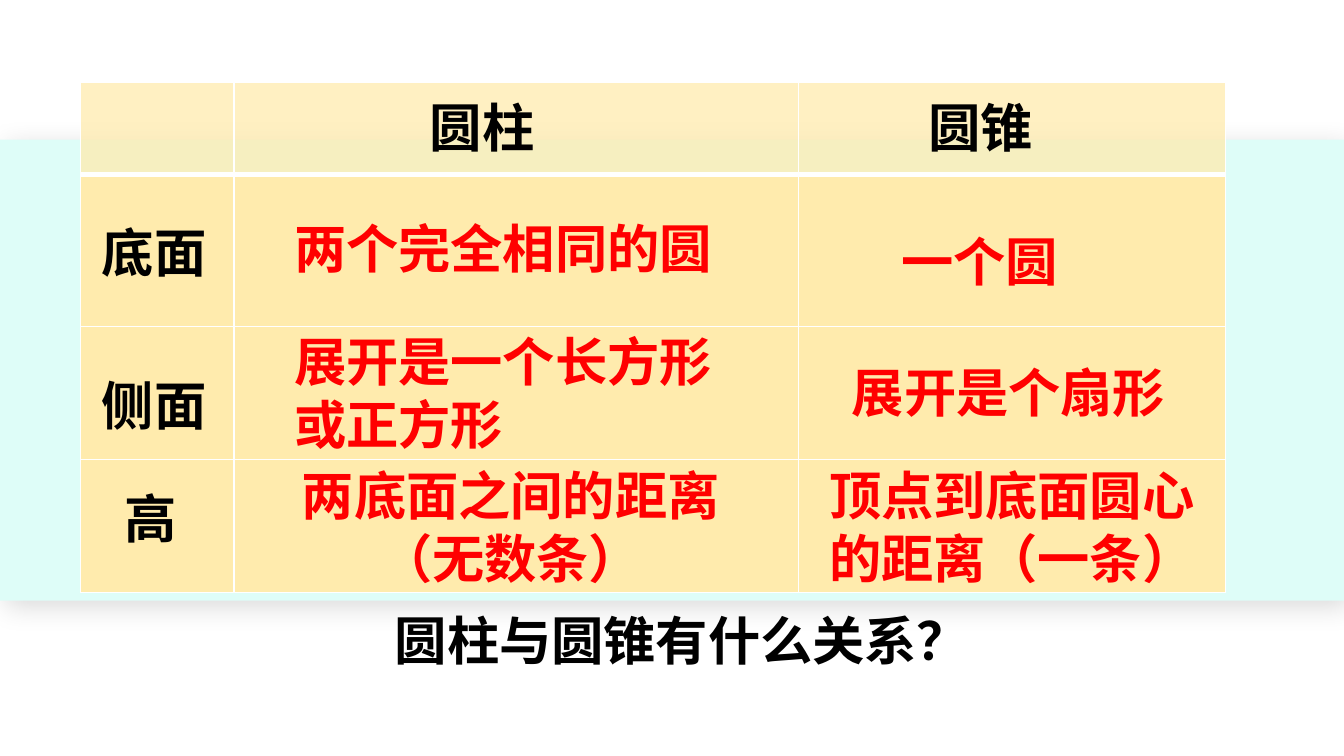
from lxml.etree import SubElement
from pptx import Presentation
from pptx.dml.color import RGBColor
from pptx.enum.shapes import MSO_SHAPE
from pptx.enum.text import PP_ALIGN
from pptx.oxml import parse_xml
from pptx.oxml.ns import qn
from pptx.util import Inches, Pt

NS = 'xmlns:a="http://schemas.openxmlformats.org/drawingml/2006/main"'
W = 10
H = W * 9 / 16
FONT, LATIN = "Noto Sans CJK SC", "Times New Roman"
BLACK, RED, WHITE, BAND, CELL = "000000", "FF0000", "FFFFFF", "DEFDF8", "FFEBAD"
LEFT, TOP = 0.6, 0.61
COLS = [1.14, 4.2, 3.18]
ROWS = [0.69, 1.13, 0.99, 0.99]
LINE, TWO_LINES = 0.57, 1.04

# column, row, offset in the cell, width, height, text, colour
LABELS = [
    (1, 0, 1.36, 0.05, 1.05, LINE, "圆柱", BLACK),
    (2, 0, 0.87, 0.05, 1.03, LINE, "圆锥", BLACK),
    (0, 1, 0.06, 0.29, 1.05, LINE, "底面", BLACK),
    (0, 2, 0.06, 0.3, 1.05, LINE, "侧面", BLACK),
    (0, 3, 0.23, 0.15, 0.69, LINE, "高", BLACK),
    (1, 1, 0.35, 0.26, 3.4, LINE, "两个完全相同的圆", RED),
    (1, 2, 0.35, -0.03, 3.53, TWO_LINES, "展开是一个长方形或正方形", RED),
    (1, 3, 0.06, -0.02, 4, TWO_LINES, "两底面之间的距离（无数条）", RED),
    (2, 1, 0.67, 0.36, 1.54, LINE, "一个圆", RED),
    (2, 2, 0.3, 0.2, 2.6, LINE, "展开是个扇形", RED),
    (2, 3, 0.13, -0.02, 3.22, TWO_LINES, "顶点到底面圆心的距离（一条）", RED),
]
CENTRED = {(1, 3)}
QUESTION = [("圆柱与圆锥有什么关系", FONT), ("？", LATIN)]


def rgb(color):
    """Turn a hex string into a colour."""
    return RGBColor.from_string(color)


def style(r, color, font=FONT):
    """Format a run in bold 28 point."""
    r.font.size, r.font.bold, r.font.name = Pt(28), True, font
    r.font.color.rgb = rgb(color)
    SubElement(r.font._element, qn("a:ea")).set("typeface", FONT)


def add_text(s, x, y, w, h):
    """Add a wrapping text box and return its first paragraph."""
    tf = s.shapes.add_textbox(Inches(x), Inches(y), Inches(w), Inches(h)).text_frame
    tf.word_wrap = True
    return tf.paragraphs[0]


def add_band(s):
    """Add the wide band with its soft shadow."""
    sp = s.shapes.add_shape(MSO_SHAPE.RECTANGLE, 0, Inches(1.04), Inches(W), Inches(3.43))
    sp.shadow.inherit = False
    sp.fill.solid()
    sp.fill.fore_color.rgb = rgb(BAND)
    sp.line.fill.background()
    effects = sp._element.spPr.find(qn("a:effectLst"))
    effects.append(parse_xml(
        f'<a:outerShdw {NS} blurRad="{Pt(15)}" dist="{Pt(5)}" dir="2700000" algn="tl" rotWithShape="0">'
        f'<a:srgbClr val="{BLACK}"><a:alpha val="15000"/></a:srgbClr></a:outerShdw>'))


def add_grid(s):
    """Add the table with its fills and white rules."""
    frame = s.shapes.add_table(len(ROWS), len(COLS), Inches(LEFT), Inches(TOP),
                               Inches(sum(COLS)), Inches(sum(ROWS)))
    table = frame.table
    for col, w in zip(table.columns, COLS):
        col.width = Inches(w)
    for i, (row, h) in enumerate(zip(table.rows, ROWS)):
        row.height = Inches(h)
        for cell in row.cells:
            cell.fill.solid()
            cell.fill.fore_color.rgb = rgb(CELL)
            tcPr = cell._tc.get_or_add_tcPr()
            if i == 0:
                SubElement(tcPr.find(".//" + qn("a:srgbClr")), qn("a:alpha")).set("val", "74000")
            for n, side in enumerate("LRTB"):
                width = 3 if (i, side) in {(0, "B"), (1, "T")} else 1
                tcPr.insert(n, parse_xml(
                    f'<a:ln{side} {NS} w="{Pt(width)}"><a:solidFill><a:srgbClr val="{WHITE}"/>'
                    f'</a:solidFill></a:ln{side}>'))


def main():
    """Build the comparison slide."""
    prs = Presentation()
    prs.slide_width, prs.slide_height = Inches(W), Inches(H)
    s = prs.slides.add_slide(prs.slide_layouts[6])
    add_band(s)
    add_grid(s)
    for col, row, dx, dy, w, h, text, color in LABELS:
        p = add_text(s, LEFT + sum(COLS[:col]) + dx, TOP + sum(ROWS[:row]) + dy, w, h)
        p.text = text
        if (col, row) in CENTRED:
            p.alignment = PP_ALIGN.CENTER
        style(p.runs[0], color)
    p = add_text(s, 2.84, 4.48, 4.5, LINE)
    for text, font in QUESTION:
        r = p.add_run()
        r.text = text
        style(r, BLACK, font)
    prs.save("out.pptx")


if __name__ == "__main__":
    main()
